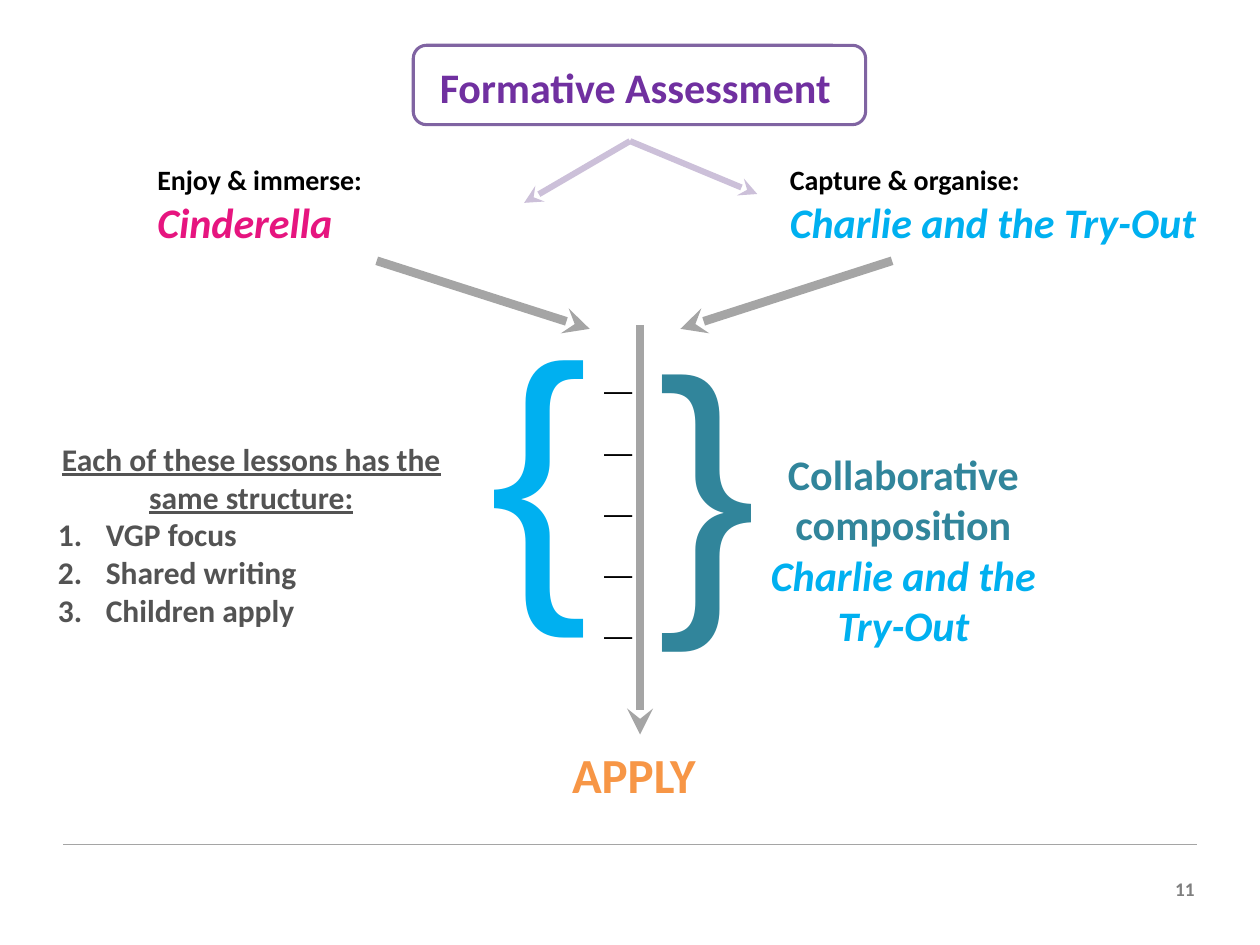
import pptx
import pptx.util
import pptx.dml.color
import pptx.enum.shapes
import pptx.enum.text
import pptx.oxml
from pptx.oxml.ns import qn

Pt = pptx.util.Pt
ALIGN = pptx.enum.text.PP_ALIGN
FIT = pptx.enum.text.MSO_AUTO_SIZE.SHAPE_TO_FIT_TEXT
A = 'xmlns:a="http://schemas.openxmlformats.org/drawingml/2006/main"'

THEME = {
    "font": "Calibri", "symbol": "Arial",
    "small": 16, "list": 18, "big": 24, "apply": 28, "brace": 170, "page": 11,
    "white": "FFFFFF", "black": "000000", "purple": "7030A0", "frame": "8064A2",
    "lilac": "CCC0D9", "grey": "A5A5A5", "dark": "535353", "mid": "7F7F7F",
    "pink": "E6157F", "blue": "00B0F0", "teal": "31859B", "orange": "F79646",
}

prs = pptx.Presentation()
prs.slide_width, prs.slide_height = pptx.util.Inches(10), pptx.util.Inches(7.5)
U = prs.slide_width // 100  # grid of 100 columns by 75 rows
s = prs.slides.add_slide(prs.slide_layouts[1])


def write(p, text, size="big", color="black", font="font", bold=True,
          italic=False, underline=False, align=ALIGN.LEFT):
    p.alignment = align
    p.space_before = Pt(0)
    r = p.add_run()
    r.text = text
    f = r.font
    f.name, f.size = THEME[font], Pt(THEME[size])
    f.bold, f.italic, f.underline = bold, italic, underline
    f.color.rgb = pptx.dml.color.RGBColor.from_string(THEME[color])


def line(x1, y1, x2, y2, color, width, arrow=True):
    c = s.shapes.add_connector(pptx.enum.shapes.MSO_CONNECTOR.STRAIGHT,
                               *[int(v * U) for v in (x1, y1, x2, y2)])
    c.line.color.rgb = pptx.dml.color.RGBColor.from_string(THEME[color])
    c.line.width = Pt(width)
    if arrow:
        c.line._get_or_add_ln().append(
            pptx.oxml.parse_xml(f'<a:tailEnd {A} type="stealth"/>'))
    c._element.spPr.append(pptx.oxml.parse_xml(f'<a:effectLst {A}/>'))


# Footer rule
line(5, 67, 95, 67, "grey", 0.75, arrow=False)

# Frame behind the title
frame = s.shapes.add_shape(pptx.enum.shapes.MSO_SHAPE.ROUNDED_RECTANGLE,
                           *[int(v * U) for v in (32.8, 3.6, 35.9, 6.3)])
frame.shadow.inherit = False
frame.fill.solid()
frame.fill.fore_color.rgb = pptx.dml.color.RGBColor.from_string(THEME["white"])
frame.line.color.rgb = pptx.dml.color.RGBColor.from_string(THEME["frame"])
frame.line.width = Pt(1.75)

# Title, brought in front of its frame
title = s.shapes.title
title.left, title.top, title.width, title.height = [
    int(v * U) for v in (12.9, 4.3, 75.8, 5.1)]
write(title.text_frame.paragraphs[0], "Formative Assessment ",
      color="purple", align=ALIGN.CENTER)
frame._element.addnext(title._element)

# Lesson structure list
body = s.placeholders[1]
body.left, body.top, body.width, body.height = [
    int(v * U) for v in (4.1, 34.4, 31.7, 16.2)]
tf = body.text_frame
tf.margin_left = tf.margin_right = tf.margin_top = tf.margin_bottom = U // 2
p = tf.paragraphs[0]
pPr = p._p.get_or_add_pPr()
pPr.set("marL", "0")
pPr.set("indent", "0")
pPr.append(pptx.oxml.parse_xml(f'<a:buNone {A}/>'))
write(p, "Each of these lessons has the same structure:", size="list",
      color="dark", underline=True, align=ALIGN.CENTER)
for item in ("VGP focus", "Shared writing", "Children apply"):
    p = tf.add_paragraph()
    pPr = p._p.get_or_add_pPr()
    pPr.set("marL", str(int(3.8 * U)))
    pPr.set("indent", str(int(-3.8 * U)))
    for bullet in (f'<a:buClr {A}><a:srgbClr val="{THEME["dark"]}"/></a:buClr>',
                   f'<a:buFont {A} typeface="{THEME["font"]}"/>',
                   f'<a:buAutoNum {A} type="arabicPeriod"/>'):
        pPr.append(pptx.oxml.parse_xml(bullet))
    write(p, item, size="list", color="dark")

# Text boxes: place, rotation, then paragraphs of (text, format) runs
mid = {"align": ALIGN.CENTER}
book = {"color": "blue", "italic": True}
brace = {"size": "brace", "font": "symbol", "bold": False}
boxes = [
    ((47, 26.3, 4.3, 24.6), 0,
     [[("_____", {"size": "apply", "font": "symbol"})]]),
    ((43, 28, 4.7, 29.6), 180, [[("}", {**brace, "color": "blue"})]]),
    ((51.2, 22.8, 4.7, 29.6), 0, [[("}", {**brace, "color": "teal"})]]),
    ((11.5, 12.4, 22.6, 7.7), 0,
     [[("Enjoy & immerse: ", {"size": "small"}),
       ("Cinderella", {"color": "pink", "italic": True})]]),
    ((61.7, 12.4, 37.1, 7.7), 0,
     [[("Capture & organise:", {"size": "small"})],
      [("Charlie and the Try-Out", book)]]),
    ((58.7, 35.1, 26, 18.9), 0,
     [[("Collaborative composition", {**mid, "color": "teal"})],
      [("Charlie and the Try-Out", {**mid, **book})]]),
    ((27.6, 58.6, 46.3, 5.7), 0,
     [[("APPLY ", {**mid, "size": "apply", "color": "orange"})]]),
    ((92, 69.1, 3.8, 2.9), 0,
     [[("11", {"size": "page", "color": "mid", "align": ALIGN.RIGHT})]]),
]
for at, rotation, paragraphs in boxes:
    box = s.shapes.add_textbox(*[int(v * U) for v in at])
    box.rotation = rotation
    tf = box.text_frame
    tf.word_wrap = True
    tf.auto_size = FIT
    for i, runs in enumerate(paragraphs):
        p = tf.add_paragraph() if i else tf.paragraphs[0]
        for text, style in runs:
            write(p, text, **style)
        if text == "_____":
            p.line_spacing = 1.04  # one tick per wrapped line

# Arrows: from the title, into the timeline, and the timeline itself
for x, y in ((60.1, 15.4), (41.6, 16.1)):
    line(50, 11.2, x, y, "lilac", 3.5)
for x1, x2 in ((29.9, 46.8), (70.8, 54)):
    line(x1, 20.7, x2, 26.1, "grey", 5)
line(50.8, 25.8, 50.8, 58.3, "grey", 5)

prs.save("out.pptx")
